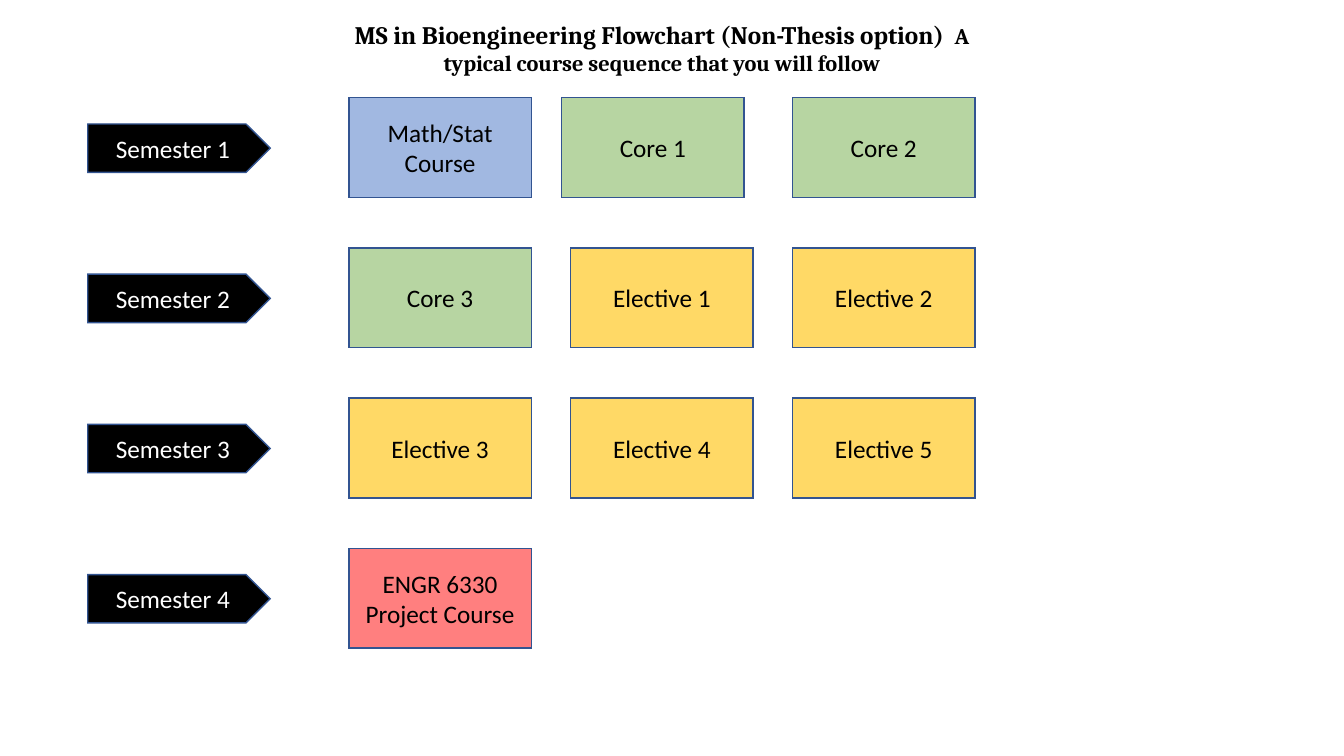
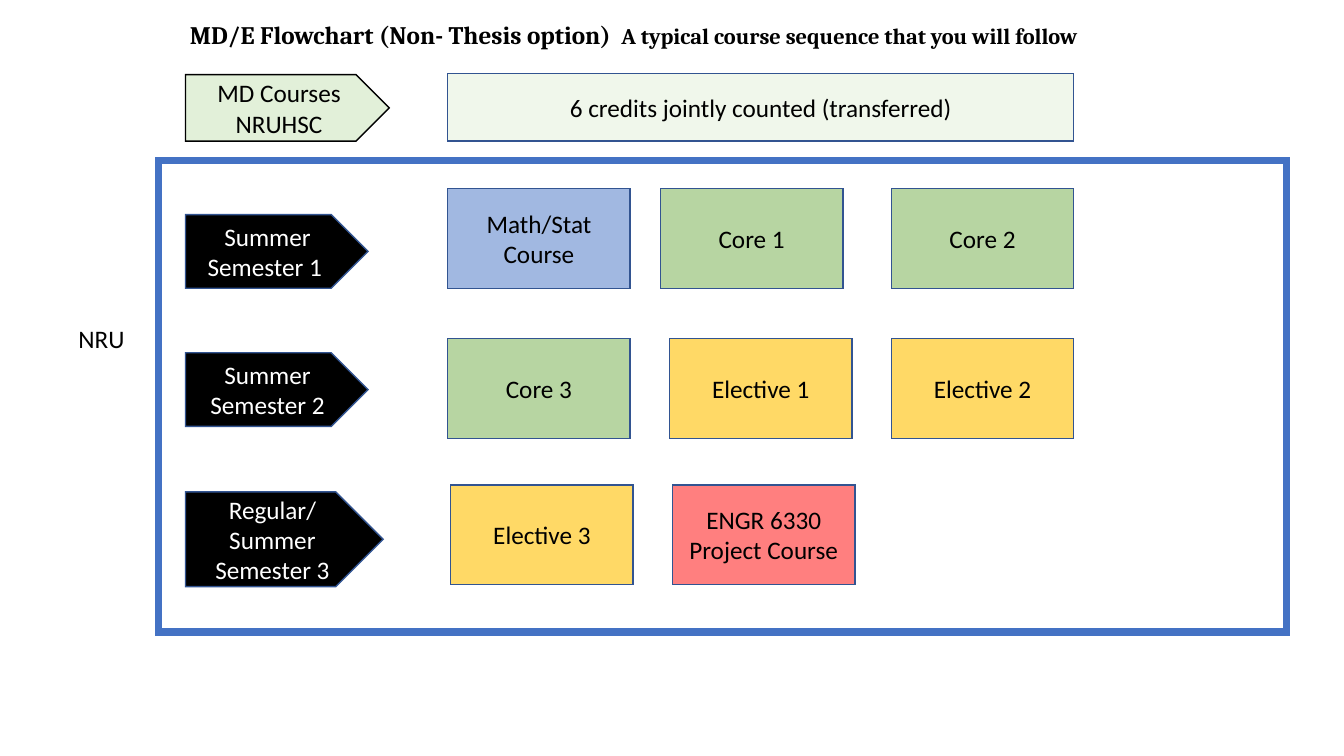
from dataclasses import dataclass

from lxml import etree
from pptx import Presentation
from pptx import util as u
from pptx.dml.color import RGBColor
from pptx.enum import shapes, text
from pptx.oxml.ns import qn


@dataclass(frozen=True)
class Theme:
    black: str = "000000"
    white: str = "FFFFFF"
    blue: str = "4472C4"
    navy: str = "325491"
    green: str = "70AD47"
    pale_green: str = "E2F0D9"
    yellow: str = "FFD966"
    red: str = "FF0000"
    body_font: str = "Calibri"
    title_font: str = "Cambria"
    body_size: float = 18
    subtitle_size: float = 16
    outline: float = 1
    frame_outline: float = 5.25


THEME = Theme()
COURSE_FILLS = {
    "Math/Stat": (THEME.blue, 50),
    "Core": (THEME.green, 50),
    "Elective": (THEME.yellow, 100),
    "ENGR": (THEME.red, 50),
}
BOX_WIDTH, BOX_HEIGHT = 1.81, 0.99
COLUMN_PITCH = 2.2
ROW_PITCH = 1.49
CORE_SHIFT = -0.09
SUBTITLE = " A typical course sequence that you will follow"


class Flowchart:
    def __init__(self, deck):
        self.deck = deck
        self.slide = None

    def new_slide(self):
        self.slide = self.deck.slides.add_slide(self.deck.slide_layouts[6])

    def style(self, run, color=THEME.black, font=THEME.body_font,
              size=THEME.body_size, bold=False):
        run.font.name = font
        run.font.size = u.Pt(size)
        run.font.bold = bold
        run.font.color.rgb = RGBColor.from_string(color)

    def outlined(self, preset, at, line, width=THEME.outline):
        shape = self.slide.shapes.add_shape(preset, *map(u.Inches, at))
        shape.shadow.inherit = False
        shape.line.color.rgb = RGBColor.from_string(line)
        shape.line.width = u.Pt(width)
        outline = shape.element.spPr.find(qn("a:ln"))
        etree.SubElement(outline, qn("a:miter")).set("lim", "800000")
        return shape

    def block(self, preset, at, label, fill, opacity=100,
              line=THEME.navy, color=THEME.black):
        shape = self.outlined(preset, at, line)
        shape.fill.solid()
        shape.fill.fore_color.rgb = RGBColor.from_string(fill)
        if opacity < 100:
            solid = shape.element.spPr.find(qn("a:solidFill"))
            rgb = solid.find(qn("a:srgbClr"))
            etree.SubElement(rgb, qn("a:alpha")).set("val", str(opacity * 1000))
        frame = shape.text_frame
        frame.word_wrap = True
        frame.vertical_anchor = text.MSO_ANCHOR.MIDDLE
        frame.text = label
        paragraph = frame.paragraphs[0]
        paragraph.alignment = text.PP_ALIGN.CENTER
        self.style(paragraph.runs[0], color)

    def box(self, at, label, fill, opacity=100):
        self.block(shapes.MSO_SHAPE.RECTANGLE, at, label, fill, opacity)

    def arrow(self, at, label, fill=THEME.black, line=THEME.navy, color=THEME.white):
        self.block(shapes.MSO_SHAPE.PENTAGON, at, label, fill, line=line, color=color)

    def courses(self, left, top, names):
        for column, name in enumerate(names):
            shift = CORE_SHIFT if name == "Core 1" else 0
            at = (left + column * COLUMN_PITCH + shift, top, BOX_WIDTH, BOX_HEIGHT)
            self.box(at, name, *COURSE_FILLS[name.split()[0]])

    def frame(self, at):
        border = self.outlined(shapes.MSO_SHAPE.RECTANGLE, at, THEME.blue,
                               THEME.frame_outline)
        border.fill.background()

    def text_box(self, at, wrap):
        frame = self.slide.shapes.add_textbox(*map(u.Inches, at)).text_frame
        frame.word_wrap = wrap
        frame.auto_size = text.MSO_AUTO_SIZE.SHAPE_TO_FIT_TEXT
        return frame.paragraphs[0]

    def title(self, at, heading):
        paragraph = self.text_box(at, True)
        paragraph.alignment = text.PP_ALIGN.CENTER
        for part, size in ((heading, THEME.body_size), (SUBTITLE, THEME.subtitle_size)):
            run = paragraph.add_run()
            run.text = part
            self.style(run, font=THEME.title_font, size=size, bold=True)

    def label(self, at, caption):
        paragraph = self.text_box(at, False)
        paragraph.text = caption
        self.style(paragraph.runs[0])


def build_bioengineering(chart):
    chart.new_slide()
    chart.title((3.41, 0.14, 6.31, 0.67),
                "MS in Bioengineering Flowchart (Non-Thesis option) ")
    semesters = (
        ("Math/Stat Course", "Core 1", "Core 2"),
        ("Core 3", "Elective 1", "Elective 2"),
        ("Elective 3", "Elective 4", "Elective 5"),
        ("ENGR 6330 Project Course",),
    )
    for row, names in enumerate(semesters):
        top = 0.97 + row * ROW_PITCH
        chart.arrow((0.87, top + 0.26, BOX_WIDTH, 0.48), f"Semester {row + 1}")
        chart.courses(3.46, top, names)


def build_medical(chart):
    chart.new_slide()
    chart.title((1.24, 0.14, 10.09, 0.4), "MD/E Flowchart (Non- Thesis option) ")
    chart.arrow((1.84, 0.74, 2.02, 0.66), "MD Courses NRUHSC",
                THEME.pale_green, THEME.black, THEME.black)
    chart.box((4.44, 0.73, 6.21, 0.67), "6 credits jointly counted (transferred)",
              THEME.pale_green, 50)
    chart.frame((1.57, 1.59, 11.19, 4.68))
    chart.label((0.68, 3.16, 0.72, 0.4), "NRU")
    semesters = (
        ("Summer Semester 1 ", (2.13, BOX_WIDTH, 0.73), (4.44, 1.87),
         ("Math/Stat Course", "Core 1", "Core 2")),
        ("Summer Semester 2", (3.5, BOX_WIDTH, 0.73), (4.44, 3.36),
         ("Core 3", "Elective 1", "Elective 2")),
        ("Regular/ Summer Semester 3", (4.88, 1.96, 0.94), (4.47, 4.81),
         ("Elective 3", "ENGR 6330 Project Course")),
    )
    for semester, arrow_place, (left, top), names in semesters:
        chart.arrow((1.84, *arrow_place), semester)
        chart.courses(left, top, names)


def main():
    deck = Presentation()
    deck.slide_width = u.Inches(13.33)
    deck.slide_height = u.Inches(7.5)
    chart = Flowchart(deck)
    build_bioengineering(chart)
    build_medical(chart)
    deck.save("out.pptx")


if __name__ == "__main__":
    main()
